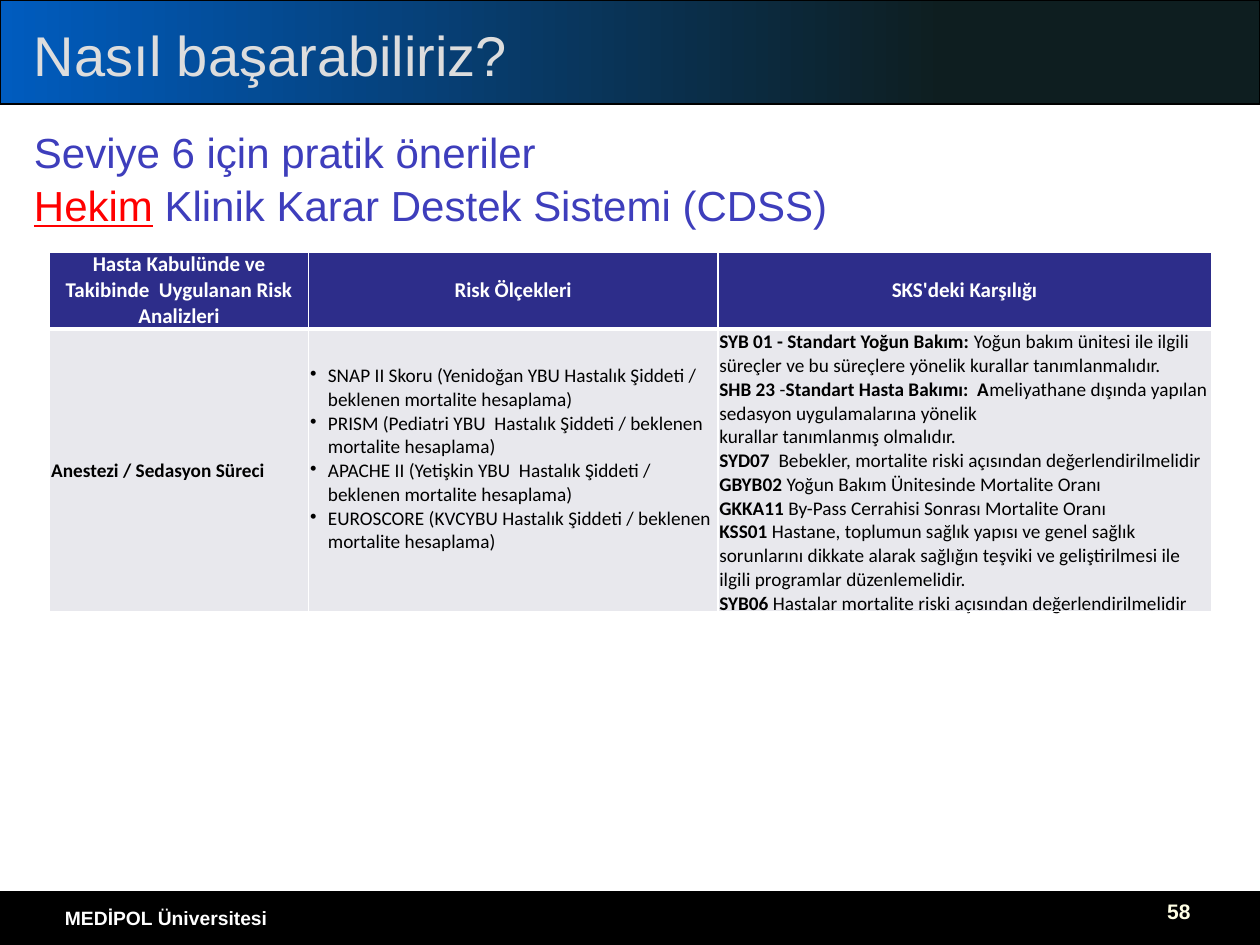
from pptx import Presentation
from pptx.dml.color import RGBColor
from pptx.enum import shapes, text
from pptx.oxml.ns import qn
from pptx.util import Cm, Pt
from lxml import etree

BLACK = RGBColor(0, 0, 0)
WHITE = RGBColor(255, 255, 255)
RED = RGBColor(255, 0, 0)
BAND_DARK = RGBColor(0x0E, 0x1E, 0x20)
BAND_BLUE = RGBColor(0x00, 0x5C, 0xBF)
TITLE_GREY = RGBColor(0xDD, 0xDD, 0xDD)
HEADING_BLUE = RGBColor(0x3E, 0x3E, 0xBC)
PAGE_CREAM = RGBColor(0xFF, 0xFF, 0xE5)
HEADER_FILL = RGBColor(0x2D, 0x2D, 0x8A)
BODY_FILL = RGBColor(0xE8, 0xE8, 0xED)

LEFT, CENTER, JUSTIFY = (text.PP_ALIGN.LEFT, text.PP_ALIGN.CENTER,
                         text.PP_ALIGN.JUSTIFY)

HEADERS = ["Hasta Kabulünde ve Takibinde  Uygulanan Risk Analizleri",
           "Risk Ölçekleri", "SKS'deki Karşılığı"]
PROCESS = ["Anestezi / Sedasyon Süreci"]
SCALES = [
    "SNAP II Skoru (Yenidoğan YBU Hastalık Şiddeti / beklenen mortalite hesaplama)",
    "PRISM (Pediatri YBU  Hastalık Şiddeti / beklenen mortalite hesaplama)",
    "APACHE II (Yetişkin YBU  Hastalık Şiddeti / beklenen mortalite hesaplama)",
    "EUROSCORE (KVCYBU Hastalık Şiddeti / beklenen mortalite hesaplama)",
]
BOLD = {"bold": True}
STANDARDS = [
    [("SYB 01 - Standart Yoğun Bakım: ", BOLD),
     "Yoğun bakım ünitesi ile ilgili süreçler ve bu süreçlere yönelik kurallar tanımlanmalıdır."],
    [("SHB 23", BOLD), " -", ("Standart Hasta Bakımı:  A", BOLD),
     "meliyathane dışında yapılan sedasyon uygulamalarına yönelik"],
    "kurallar tanımlanmış olmalıdır.",
    [("SYD07", BOLD), "  Bebekler, mortalite riski açısından değerlendirilmelidir"],
    [("GBYB02 ", BOLD), "Yoğun Bakım Ünitesinde Mortalite Oranı"],
    [("GKKA11", BOLD), " By-Pass Cerrahisi Sonrası Mortalite Oranı"],
    [("KSS01", BOLD), " Hastane, toplumun sağlık yapısı ve genel sağlık sorunlarını "
     "dikkate alarak sağlığın teşviki ve geliştirilmesi ile"],
    "ilgili programlar düzenlemelidir.",
    [("SYB06", BOLD), " Hastalar mortalite riski açısından değerlendirilmelidir"],
]


def set_bullet(p, char=None, indent=0):
    pPr = p._p.get_or_add_pPr()
    pPr.set("marL", str(indent))
    pPr.set("indent", str(-indent))
    if char:
        etree.SubElement(pPr, qn("a:buChar")).set("char", char)
    else:
        etree.SubElement(pPr, qn("a:buNone"))


def add_text(tf, lines, size, color, font="Arial", bold=False, align=LEFT,
             spacing=None, bullet=None, indent=0):
    """Each line is a string or a list of runs: strings or (string, font overrides)."""
    for i, line in enumerate(lines):
        p = tf.add_paragraph() if i else tf.paragraphs[0]
        set_bullet(p, bullet, indent)
        p.alignment = align
        p.space_before = Pt(0)
        if spacing:
            p.line_spacing = spacing
        for part in [line] if isinstance(line, str) else line:
            words, extra = (part, {}) if isinstance(part, str) else part
            r = p.add_run()
            r.text = words
            f = r.font
            f.name, f.size = font, Pt(size)
            f.bold = extra.get("bold", bold)
            f.underline = extra.get("underline", False)
            f.color.rgb = extra.get("color", color)


def add_band(s, top, height):
    sp = s.shapes.add_shape(shapes.MSO_SHAPE.RECTANGLE, 0, Cm(top), Cm(25.4), Cm(height))
    sp.shadow.inherit = False
    sp.line.color.rgb = BLACK
    sp.line.width = Pt(0.75)
    return sp


def add_label(s, words, left, top, width, height, **fmt):
    tf = s.shapes.add_textbox(Cm(left), Cm(top), Cm(width), Cm(height)).text_frame
    tf.word_wrap = True
    add_text(tf, [words], **fmt)


def fill_placeholder(sp, box, lines, anchor=text.MSO_ANCHOR.TOP, **fmt):
    sp.left, sp.top, sp.width, sp.height = map(Cm, box)
    tf = sp.text_frame
    tf.auto_size = text.MSO_AUTO_SIZE.NONE
    tf.vertical_anchor = anchor
    add_text(tf, lines, **fmt)


def set_borders(cell, bottom):
    tcPr = cell._tc.get_or_add_tcPr()
    for side, width in (("L", 1), ("R", 1), ("T", 1), ("B", bottom)):
        ln = etree.SubElement(tcPr, qn("a:ln" + side), w=str(Pt(width)))
        fill = etree.SubElement(ln, qn("a:solidFill"))
        etree.SubElement(fill, qn("a:srgbClr"), val=str(WHITE))


def fill_cell(cell, lines, fill, margin=0.03, below=0, border_bottom=1, **fmt):
    set_borders(cell, border_bottom)
    cell.fill.solid()
    cell.fill.fore_color.rgb = fill
    cell.margin_left = cell.margin_right = cell.margin_top = Cm(margin)
    cell.margin_bottom = Cm(below)
    cell.vertical_anchor = text.MSO_ANCHOR.MIDDLE
    add_text(cell.text_frame, lines, font="Calibri", **fmt)


def add_risk_table(s):
    widths, heights = (5.22, 8.25, 9.95), (1.55, 5.7)
    table = s.shapes.add_table(2, 3, Cm(1), Cm(5.08), Cm(sum(widths)),
                               Cm(sum(heights))).table
    for column, width in zip(table.columns, widths):
        column.width = Cm(width)
    for row, height in zip(table.rows, heights):
        row.height = Cm(height)
    for col, header in enumerate(HEADERS):
        fill_cell(table.cell(0, col), [header], HEADER_FILL, margin=0, border_bottom=3,
                  size=12, color=WHITE, bold=True, align=CENTER)
    body = {"fill": BODY_FILL, "size": 11, "color": BLACK}
    fill_cell(table.cell(1, 0), PROCESS, bold=True, **body)
    fill_cell(table.cell(1, 1), SCALES, below=0.48, bullet="•", indent=Cm(0.36), **body)
    fill_cell(table.cell(1, 2), STANDARDS, **body)


def main():
    prs = Presentation()
    prs.slide_width, prs.slide_height = Cm(25.4), Cm(19.05)
    s = prs.slides.add_slide(prs.slide_layouts[3])
    title, level, system = list(s.placeholders)

    header = add_band(s, 0, 2.1)
    header.fill.gradient()
    header.fill.gradient_angle = 180
    for stop, color, position in zip(header.fill.gradient_stops,
                                     (BAND_DARK, BAND_BLUE), (0.25, 1)):
        stop.color.rgb = color
        stop.position = position
    footer = add_band(s, 17.98, 1.07)
    footer.fill.solid()
    footer.fill.fore_color.rgb = BLACK
    for band in (footer, header):
        s.shapes._spTree.insert(2, band._element)  # behind the placeholders

    fill_placeholder(title, (0.43, 0.3, 21.8, 1.6), ["Nasıl başarabiliriz?"],
                     anchor=text.MSO_ANCHOR.MIDDLE, size=32, color=TITLE_GREY)
    heading = {"size": 24, "color": HEADING_BLUE, "align": JUSTIFY, "spacing": 0.9}
    fill_placeholder(level, (0.43, 2.54, 24.55, 1.06),
                     ["Seviye 6 için pratik öneriler"], **heading)
    fill_placeholder(system, (0.43, 3.6, 24.55, 14.1),
                     [[("Hekim", {"color": RED, "underline": True}),
                       " Klinik Karar Destek Sistemi (CDSS)"]], **heading)
    add_label(s, "MEDİPOL Üniversitesi", 1.06, 18.15, 8.05, 0.7,
              size=11, color=WHITE, bold=True)
    add_label(s, "58", 23.28, 17.98, 1.7, 1.07, size=12, color=PAGE_CREAM, bold=True)
    add_risk_table(s)
    prs.save("out.pptx")


if __name__ == "__main__":
    main()
